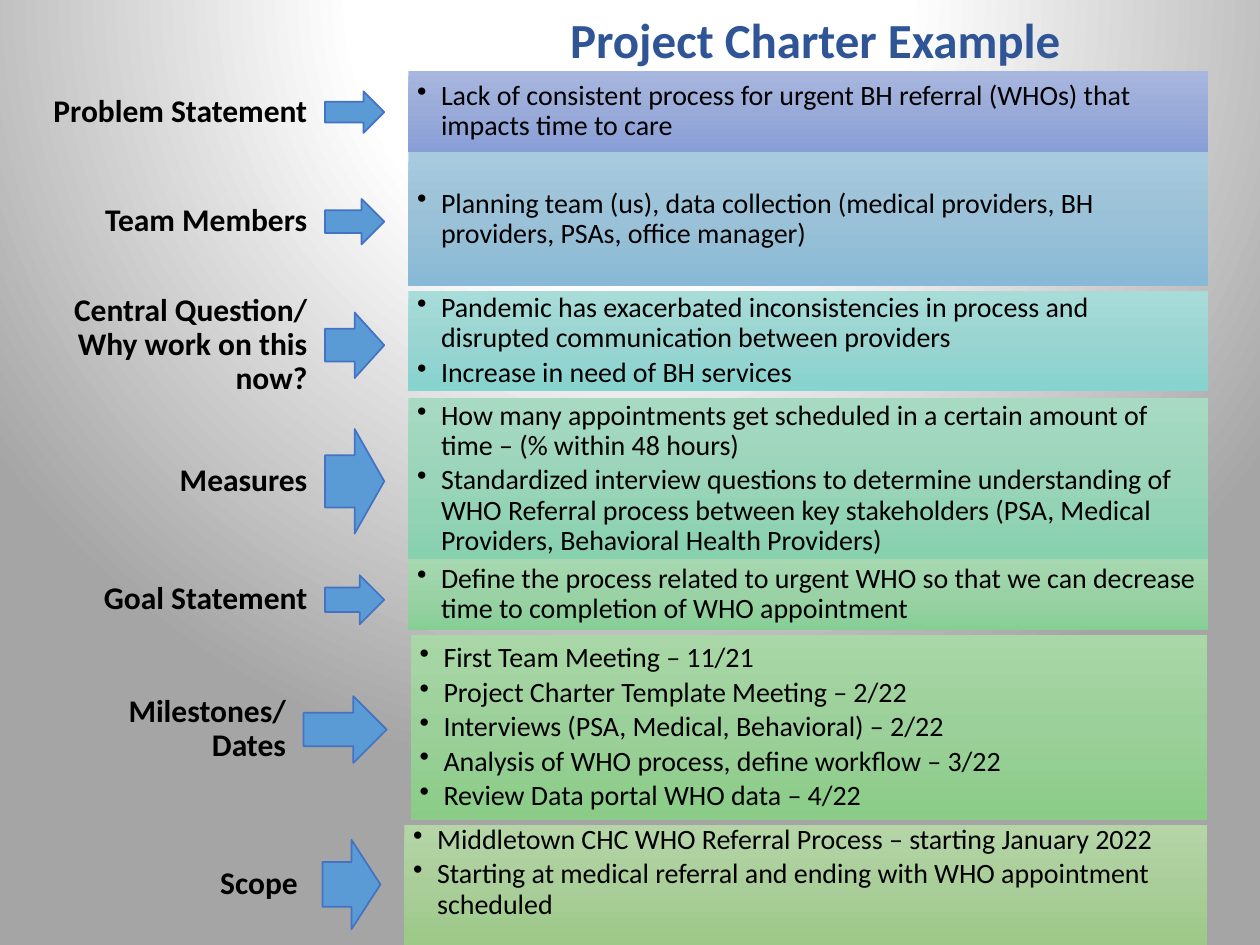
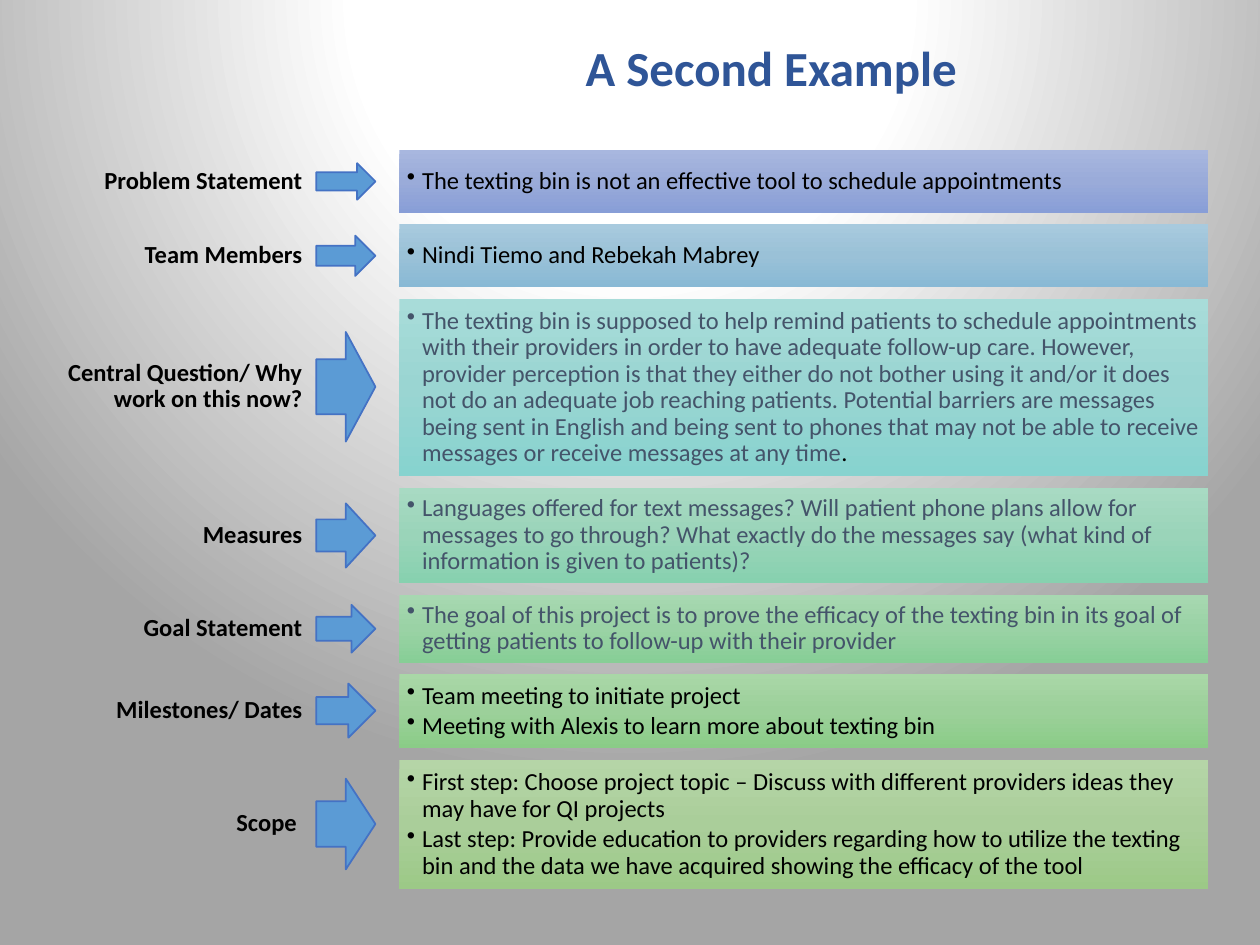
import pptx
import pptx.dml.color
import pptx.enum.shapes
import pptx.enum.text
import pptx.oxml
import pptx.oxml.ns
import pptx.util

PX = 9144  # 100 px to the inch
RGB = pptx.dml.color.RGBColor.from_string
SHAPE = pptx.enum.shapes.MSO_SHAPE
ALIGN = pptx.enum.text.PP_ALIGN
ANCHOR = pptx.enum.text.MSO_ANCHOR

# Colours
BLACK = RGB("000000")
SLATE = RGB("44546A")
NAVY = RGB("2F5597")
BLUE = RGB("5B9BD5")
EDGE = RGB("4472C4")
WHITE = RGB("FFFFFF")
GREY = RGB("A5A5A5")
BANDS = [[RGB(code) for code in band.split()] for band in (
    "A8B7DF 9AABD9 889ED7",
    "A8CADE 9AC1D7 88B9D5",
    "A8DCD9 9AD5D2 87D3CF",
    "A8DAC3 9AD4B9 87D1AF",
    "A7D8B1 9AD2A5 87CE96",
    "A9D7A7 9CD09A 8ACC87",
    "B5D5A7 AACE9A 9CC987",
)]
DOWN = '<a:lin ang="5400000" scaled="0"/>'
GLOW = ('<a:path path="circle"><a:fillToRect l="50000" t="-80000" '
        'r="50000" b="180000"/></a:path>')

LABELS = ["Problem Statement", "Team Members",
          "Central Question/ Why work on this now?", "Measures",
          "Goal Statement", "Milestones/ Dates", "Scope "]


def blend(owner, fill, stops, tail):
    """Fill the owner with a gradient of (percent, colour) stops."""
    fill.solid()
    old = owner.element.find(".//" + pptx.oxml.ns.qn("a:solidFill"))
    marks = "".join(f'<a:gs pos="{pos * 1000}"><a:srgbClr val="{hue}"/></a:gs>'
                    for pos, hue in stops)
    new = pptx.oxml.parse_xml(
        f'<a:gradFill {pptx.oxml.ns.nsdecls("a")} rotWithShape="1">'
        f'<a:gsLst>{marks}</a:gsLst>{tail}</a:gradFill>')
    old.getparent().replace(old, new)


class Deck:
    """Holds the style and the slide being drawn."""

    def __init__(self):
        self.file = pptx.Presentation()
        self.file.slide_width = 1000 * PX
        self.file.slide_height = 750 * PX

    def page(self, size, pads, inset, dent):
        """Start a slide: label size, label and bar insets, bullet indent."""
        self.size, self.pads, self.inset, self.dent = size, pads, inset, dent
        self.slide = self.file.slides.add_slide(self.file.slide_layouts[6])
        blend(self.slide, self.slide.background.fill,
              [(0, WHITE), (35, WHITE), (100, GREY)], GLOW)

    def box(self, left, top, width, height):
        return self.slide.shapes.add_textbox(
            left * PX, top * PX, width * PX, height * PX)

    def shape(self, kind, left, top, width, height):
        item = self.slide.shapes.add_shape(
            kind, left * PX, top * PX, width * PX, height * PX)
        item.shadow.inherit = False
        return item

    def frame(self, item, across, down, anchor=ANCHOR.MIDDLE):
        frame = item.text_frame
        frame.word_wrap = True
        frame.vertical_anchor = anchor
        frame.margin_left = frame.margin_right = across * PX
        frame.margin_top = frame.margin_bottom = down * PX
        return frame

    def font(self, para, size, hue, bold=False):
        para.font.name = "Calibri"
        para.font.size = pptx.util.Pt(size)
        para.font.bold = bold
        para.font.color.rgb = hue

    def title(self, text, left, top, width):
        frame = self.frame(self.box(left, top, width, 57), 10, 5, ANCHOR.TOP)
        para = frame.paragraphs[0]
        para.text = text
        para.alignment = ALIGN.CENTER
        self.font(para, 28, NAVY, True)

    def label(self, text, left, mid, right):
        high = 86
        item = self.box(left, mid - high // 2, right - left, high)
        para = self.frame(item, *self.pads).paragraphs[0]
        para.text = text
        para.alignment = ALIGN.RIGHT
        para.line_spacing = 0.9
        self.font(para, self.size, BLACK, True)

    def arrow(self, left, mid, width, height):
        item = self.shape(SHAPE.RIGHT_ARROW, left, mid - height / 2, width, height)
        item.fill.solid()
        item.fill.fore_color.rgb = BLUE
        item.line.color.rgb = EDGE
        item.line.width = pptx.util.Pt(1)

    def bar(self, band, left, top, right, height, size, lines, hue=BLACK, high=False):
        """Draw a band with bullets; high sets the text at its top edge."""
        item = self.shape(SHAPE.RECTANGLE, left, top, right - left, height)
        blend(item, item.fill, zip((0, 50, 100), band), DOWN)
        item.line.fill.background()
        down, anchor = (0, ANCHOR.TOP) if high else (self.inset, ANCHOR.MIDDLE)
        frame = self.frame(item, self.inset, down, anchor)
        for index, line in enumerate(lines):
            para = frame.add_paragraph() if index else frame.paragraphs[0]
            self.bullet(para)
            para.alignment = ALIGN.LEFT
            para.line_spacing = 0.9
            para.space_after = pptx.util.Pt(size * 0.15)
            self.font(para, size, hue)
            text, *tail = line if isinstance(line, tuple) else (line,)
            para.add_run().text = text
            for extra in tail:
                run = para.add_run()
                run.text = extra
                run.font.color.rgb = BLACK
        return item

    def bullet(self, para):
        props = para._p.get_or_add_pPr()
        props.set("marL", str(self.dent * PX))
        props.set("indent", str(-self.dent * PX))
        props.append(pptx.oxml.parse_xml(
            f'<a:buChar {pptx.oxml.ns.nsdecls("a")} char="•"/>'))


def charter(deck):
    deck.page(18, (14, 5), 7, 19)
    # Bar top, bar height, arrow middle, arrow height, bullets
    rows = [
        (56, 65, 89, 33, ["Lack of consistent process for urgent BH referral (WHOs) "
                          "that impacts time to care"]),
        (121, 106, 176, 36, ["Planning team (us), data collection (medical providers, BH "
                             "providers, PSAs, office manager)"]),
        (231, 79, 274, 52, ["Pandemic has exacerbated inconsistencies in process and "
                            "disrupted communication between providers",
                            "Increase in need of BH services"]),
        (316, 128, 382, 83, ["How many appointments get scheduled in a certain amount of "
                             "time – (% within 48 hours)",
                             "Standardized interview questions to determine understanding "
                             "of WHO Referral process between key stakeholders (PSA, "
                             "Medical Providers, Behavioral Health Providers)"]),
        (444, 56, 476, 39, ["Define the process related to urgent WHO so that we can "
                            "decrease time to completion of WHO appointment"]),
        (504, 147, 579, 53, ["First Team Meeting – 11/21",
                             "Project Charter Template Meeting – 2/22",
                             "Interviews (PSA, Medical, Behavioral) – 2/22",
                             "Analysis of WHO process, define workflow – 3/22",
                             "Review Data portal WHO data – 4/22"]),
        (655, 95, 702, 71, ["Middletown CHC WHO Referral Process – starting January 2022",
                            "Starting at medical referral and ending with WHO appointment "
                            "scheduled"]),
    ]
    # Arrow left, arrow width, bar left, bar right
    usual = (258, 47, 324, 959)
    odd = {"Milestones/ Dates": (241, 66, 326, 958), "Scope ": (256, 46, 321, 958)}
    for name, band, (top, high, mid, tall, lines) in zip(LABELS, BANDS, rows):
        start, wide, left, right = odd.get(name, usual)
        deck.label(name, 25, mid, start)
        deck.arrow(start, mid, wide, tall)
        deck.bar(band, left, top, right, high, 16, lines, high=name == "Scope ")
    deck.title("Project Charter Example", 326, 3, 642)


def second(deck):
    deck.page(14, (11, 4), 6, 12)
    # Bar height, arrow height, text colour, bullets
    rows = [
        (50, 29, BLACK, ["The texting bin is not an effective tool to schedule "
                         "appointments"]),
        (50, 32, BLACK, ["Nindi Tiemo and Rebekah Mabrey"]),
        (141, 87, SLATE, [("The texting bin is supposed to help remind patients to "
                           "schedule appointments with their providers in order to have "
                           "adequate follow-up care. However, provider perception is that "
                           "they either do not bother using it and/or it does not do an "
                           "adequate job reaching patients. Potential barriers are "
                           "messages being sent in English and being sent to phones that "
                           "may not be able to receive messages or receive messages at "
                           "any time", ".")]),
        (76, 51, SLATE, ["Languages offered for text messages? Will patient phone plans "
                         "allow for messages to go through? What exactly do the messages "
                         "say (what kind of information is given to patients)?"]),
        (54, 38, SLATE, ["The goal of this project is to prove the efficacy of the texting "
                         "bin in its goal of getting patients to follow-up with their "
                         "provider"]),
        (59, 43, BLACK, ["Team meeting to initiate project",
                         "Meeting with Alexis to learn more about texting bin"]),
        (103, 72, BLACK, ["First step: Choose project topic – Discuss with different "
                          "providers ideas they may have for QI projects",
                          "Last step: Provide education to providers regarding how to "
                          "utilize the texting bin and the data we have acquired showing "
                          "the efficacy of the tool"]),
    ]
    top, gap = 119, 9
    for name, band, (high, tall, hue, lines) in zip(LABELS, BANDS, rows):
        mid = top + high // 2
        deck.label(name, 15, mid, 251)
        deck.arrow(251, mid, 47, tall)
        deck.bar(band, 317, top, 959, high, 14, lines, hue)
        top += high + gap
    deck.title("A Second Example", 333, 25, 558)


def main():
    deck = Deck()
    charter(deck)
    second(deck)
    deck.file.save("out.pptx")


if __name__ == "__main__":
    main()
